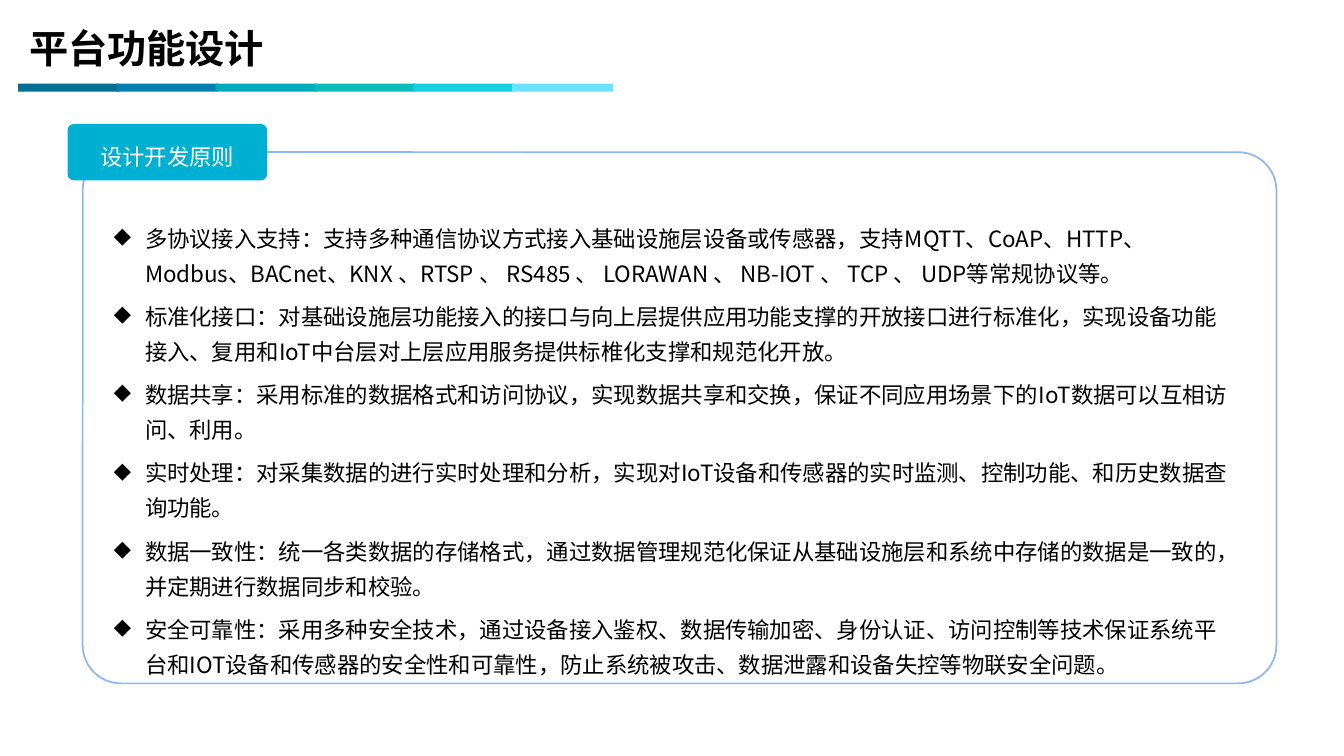
from lxml import etree
from pptx import Presentation
from pptx import util as u
from pptx.dml.color import RGBColor
from pptx.enum import shapes, text
from pptx.oxml.ns import qn

TITLE = "平台功能设计"
BADGE = "设计开发原则"
PRINCIPLES = [
    "多协议接入支持：支持多种通信协议方式接入基础设施层设备或传感器，支持MQTT、CoAP、HTTP、Modbus、BACnet、KNX 、RTSP 、 RS485 、 LORAWAN 、 NB-IOT 、 TCP 、 UDP等常规协议等。",
    "标准化接口：对基础设施层功能接入的接口与向上层提供应用功能支撑的开放接口进行标准化，实现设备功能接入、复用和IoT中台层对上层应用服务提供标椎化支撑和规范化开放。",
    "数据共享：采用标准的数据格式和访问协议，实现数据共享和交换，保证不同应用场景下的IoT数据可以互相访问、利用。",
    "实时处理：对采集数据的进行实时处理和分析，实现对IoT设备和传感器的实时监测、控制功能、和历史数据查询功能。",
    "数据一致性：统一各类数据的存储格式，通过数据管理规范化保证从基础设施层和系统中存储的数据是一致的，并定期进行数据同步和校验。",
    "安全可靠性：采用多种安全技术，通过设备接入鉴权、数据传输加密、身份认证、访问控制等技术保证系统平台和IOT设备和传感器的安全性和可靠性，防止系统被攻击、数据泄露和设备失控等物联安全问题。",
]
STRIPE_COLORS = ["007094", "017FB3", "00A9BE", "0FBABA", "19CEE0", "6AE3FE"]
STRIPE_LEFT, STRIPE_TOP, STRIPE_STEP = 0.18, 0.83, 0.98
STRIPE_SIZE = (1, 0.08)
TITLE_BOX = (0.19, 0.19, 5.5, 0.57)
PANEL_BOX = (0.82, 1.51, 11.84, 5.27)
LIST_BOX = (1.03, 2.1, 11.28, 4.72)
BADGE_BOX = (0.67, 1.23, 1.98, 0.56)
INDENT = 0.31
HEAD_FONT, BODY_FONT = "Open Sans", "Noto Sans CJK SC"


def color(value):
    return RGBColor.from_string(value)


def add_block(s, kind, box, fill=None, line=None, radius=None):
    sp = s.shapes.add_shape(kind, *map(u.Inches, box))
    sp.shadow.inherit = False
    if radius is not None:
        sp.adjustments[0] = radius
    if fill:
        sp.fill.solid()
        sp.fill.fore_color.rgb = color(fill)
    else:
        sp.fill.background()
    if line:
        sp.line.color.rgb = color(line)
        sp.line.width = u.Pt(1.25)
    else:
        sp.line.fill.background()
    return sp


def add_text_box(s, box):
    tf = s.shapes.add_textbox(*map(u.Inches, box)).text_frame
    tf.word_wrap = True
    return tf


def add_run(p, words, size, font, fill, bold=False):
    r = p.add_run()
    r.text = words
    r.font.size = u.Pt(size)
    r.font.name = font
    r.font.bold = bold
    r.font.color.rgb = color(fill)
    etree.SubElement(r.font._element, qn("a:ea"), typeface=font)


def space(p):
    p.line_spacing = 1.3
    p.space_after = u.Pt(6)


def add_bullet(p):
    props = p._p.get_or_add_pPr()
    props.set("marL", str(u.Inches(INDENT)))
    props.set("indent", str(-u.Inches(INDENT)))
    etree.SubElement(props, qn("a:buChar"), char="◆")


def main():
    prs = Presentation()
    prs.slide_width, prs.slide_height = u.Inches(13.33), u.Inches(7.5)
    s = prs.slides.add_slide(prs.slide_layouts[6])
    kinds = shapes.MSO_SHAPE

    tf = add_text_box(s, TITLE_BOX)
    add_run(tf.paragraphs[0], TITLE, 28, HEAD_FONT, "000000", True)

    for i, fill in enumerate(STRIPE_COLORS):
        left = STRIPE_LEFT + i * STRIPE_STEP
        add_block(s, kinds.RECTANGLE, (left, STRIPE_TOP, *STRIPE_SIZE), fill)

    add_block(s, kinds.ROUNDED_RECTANGLE, PANEL_BOX, line="8EB6F9", radius=0.072)

    tf = add_text_box(s, LIST_BOX)
    for i, principle in enumerate(PRINCIPLES):
        p = tf.add_paragraph() if i else tf.paragraphs[0]
        space(p)
        add_bullet(p)
        add_run(p, principle, 16, BODY_FONT, "000000")

    badge = add_block(s, kinds.ROUNDED_RECTANGLE, BADGE_BOX, "00B0D2", radius=0.112)
    tf = badge.text_frame
    tf.vertical_anchor = text.MSO_ANCHOR.MIDDLE
    p = tf.paragraphs[0]
    p.alignment = text.PP_ALIGN.CENTER
    space(p)
    add_run(p, BADGE, 16, BODY_FONT, "FFFFFF")

    prs.save("out.pptx")


if __name__ == "__main__":
    main()
